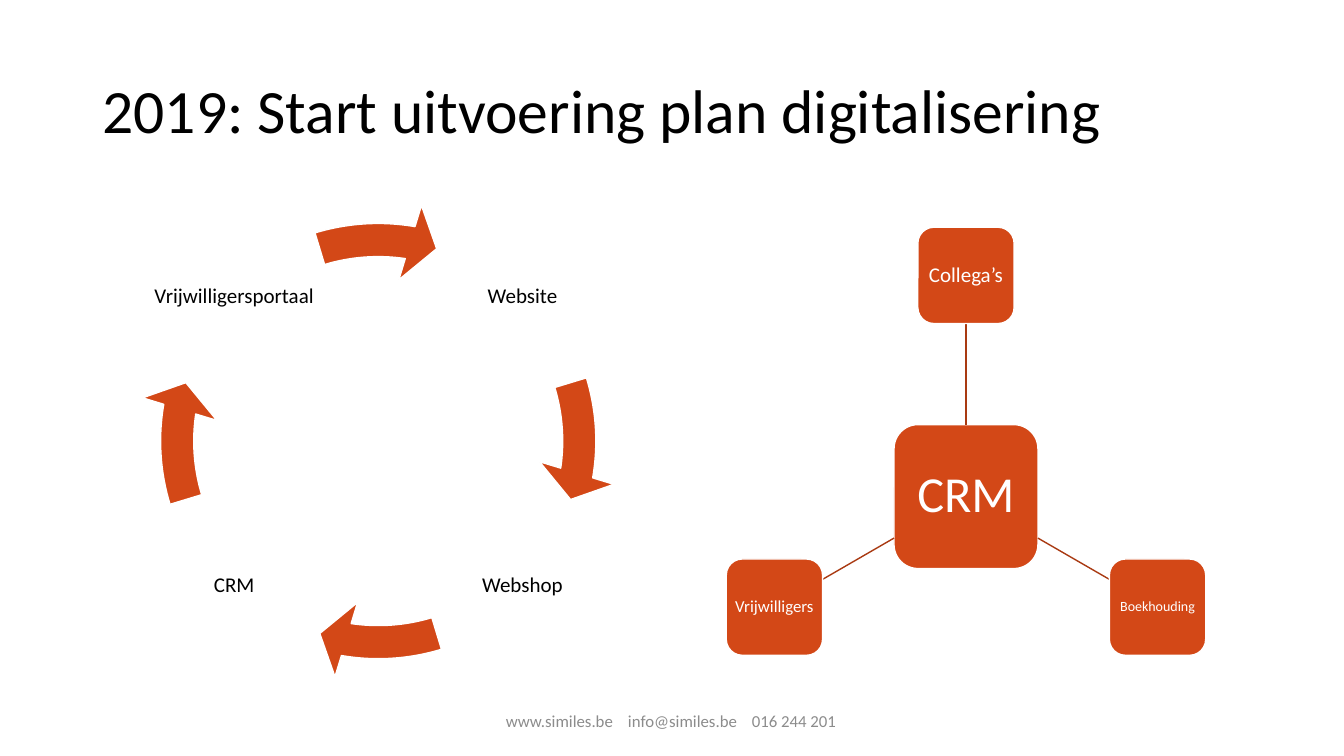
import math

import lxml.etree
import pptx
import pptx.dml.color
import pptx.enum.shapes
import pptx.enum.text
import pptx.oxml.ns
import pptx.util

Pt = pptx.util.Pt
SHAPE = pptx.enum.shapes.MSO_SHAPE
ALIGN = pptx.enum.text.PP_ALIGN
qn = pptx.oxml.ns.qn

ORANGE = "D34817"
LINE = "A93A12"
WHITE = "FFFFFF"
BLACK = "000000"
GREY = "8C8C8C"

CYCLE_CENTRE = (270.2, 315.1)
CYCLE_SIZE = 342.7
LABEL_OFFSET = 103
LABEL_SIZE = 121.7
CYCLE = [("Website", 1, -1), ("Webshop", 1, 1), ("CRM", -1, 1), ("Vrijwilligersportaal", -1, -1)]

HUB_CENTRE = (690, 354.7)
HUB_SIZE = 102.8
SPOKE = 158
NODE_SIZE = 68.8
NODES = [("Collega’s", 15, -90), ("Boekhouding", 10, 30), ("Vrijwilligers", 12, 150)]

FOOTER = ["www.similes.be", "info@similes.be", "016 244 201"]
FOOTER_TABS = [87.2, 175.7]


def rgb(color):
    """Return the colour for a hex string."""
    return pptx.dml.color.RGBColor.from_string(color)


def square(centre, size):
    """Return left, top, width and height of a square around a centre."""
    x, y = centre
    return Pt(x - size / 2), Pt(y - size / 2), Pt(size), Pt(size)


def put_text(sp, text, size, color, align=ALIGN.CENTER, inset=2, spacing=0.9):
    """Set and format one paragraph, centred vertically in its shape."""
    tf = sp.text_frame
    tf.text = text
    tf.word_wrap = True
    tf.auto_size = pptx.enum.text.MSO_AUTO_SIZE.NONE
    tf.vertical_anchor = pptx.enum.text.MSO_ANCHOR.MIDDLE
    tf.margin_left = tf.margin_right = tf.margin_top = tf.margin_bottom = Pt(inset)
    p = tf.paragraphs[0]
    p.alignment = align
    p.line_spacing = spacing
    for r in p.runs:
        r.font.name = "Calibri"
        r.font.size = Pt(size)
        r.font.color.rgb = rgb(color)


def add_filled(s, kind, centre, size):
    """Add an orange square-framed shape with a white outline."""
    sp = s.shapes.add_shape(kind, *square(centre, size))
    sp.shadow.inherit = False
    sp.fill.solid()
    sp.fill.fore_color.rgb = rgb(ORANGE)
    sp.line.color.rgb = rgb(WHITE)
    sp.line.width = Pt(1)
    return sp


def add_spoke(s, start, end):
    """Add a thin straight line between two points."""
    sp = s.shapes.add_connector(
        pptx.enum.shapes.MSO_CONNECTOR.STRAIGHT, *(Pt(v) for v in start + end)
    )
    sp.line.color.rgb = rgb(LINE)
    sp.line.width = Pt(1)
    lxml.etree.SubElement(sp._element.spPr, qn("a:effectLst"))


def add_title(s):
    """Place and format the title placeholder."""
    sp = s.shapes.title
    sp.left, sp.top, sp.width, sp.height = Pt(66), Pt(28.8), Pt(828), Pt(104.4)
    put_text(sp, "2019: Start uitvoering plan digitalisering", 44, BLACK, ALIGN.LEFT, 7.2)


def add_cycle(s):
    """Add four labels with a circular arrow after each."""
    x, y = CYCLE_CENTRE
    for i, (text, dx, dy) in enumerate(CYCLE):
        centre = (x + dx * LABEL_OFFSET, y + dy * LABEL_OFFSET)
        put_text(s.shapes.add_textbox(*square(centre, LABEL_SIZE)), text, 15, BLACK)
        sp = add_filled(s, SHAPE.CIRCULAR_ARROW, CYCLE_CENTRE, CYCLE_SIZE)
        turn = 54 * i
        values = (0.069, 4.656, 5.482 + turn, (205.862 + turn) % 216, 0.081)
        for j, value in enumerate(values):
            sp.adjustments[j] = value


def add_hub(s):
    """Add the central square and its satellites joined by spokes."""
    x, y = HUB_CENTRE
    hub = add_filled(s, SHAPE.ROUNDED_RECTANGLE, HUB_CENTRE, HUB_SIZE)
    put_text(hub, "CRM", 36, WHITE)
    for text, size, angle in NODES:
        cos, sin = math.cos(math.radians(angle)), math.sin(math.radians(angle))
        reach = max(abs(cos), abs(sin))
        inner = HUB_SIZE / 2 / reach
        outer = SPOKE - NODE_SIZE / 2 / reach
        add_spoke(s, (x + inner * cos, y + inner * sin), (x + outer * cos, y + outer * sin))
        centre = (x + SPOKE * cos, y + SPOKE * sin)
        put_text(add_filled(s, SHAPE.ROUNDED_RECTANGLE, centre, NODE_SIZE), text, size, WHITE)


def add_footer(s):
    """Add the contact line, spaced with tab stops."""
    sp = s.shapes.add_textbox(Pt(318), Pt(500.4), Pt(324), Pt(28.8))
    put_text(sp, "\t".join(FOOTER), 12, GREY, ALIGN.LEFT, 3.6, 1.0)
    sp.text_frame.margin_left = Pt(43.4)
    pPr = sp.text_frame.paragraphs[0]._p.get_or_add_pPr()
    tabs = lxml.etree.SubElement(pPr, qn("a:tabLst"))
    for pos in FOOTER_TABS:
        lxml.etree.SubElement(tabs, qn("a:tab"), pos=str(int(Pt(pos))), algn="l")


def main():
    """Build the slide and save it."""
    prs = pptx.Presentation()
    prs.slide_width, prs.slide_height = Pt(960), Pt(540)
    s = prs.slides.add_slide(prs.slide_layouts[5])
    add_title(s)
    add_cycle(s)
    add_hub(s)
    add_footer(s)
    prs.save("out.pptx")


if __name__ == "__main__":
    main()
